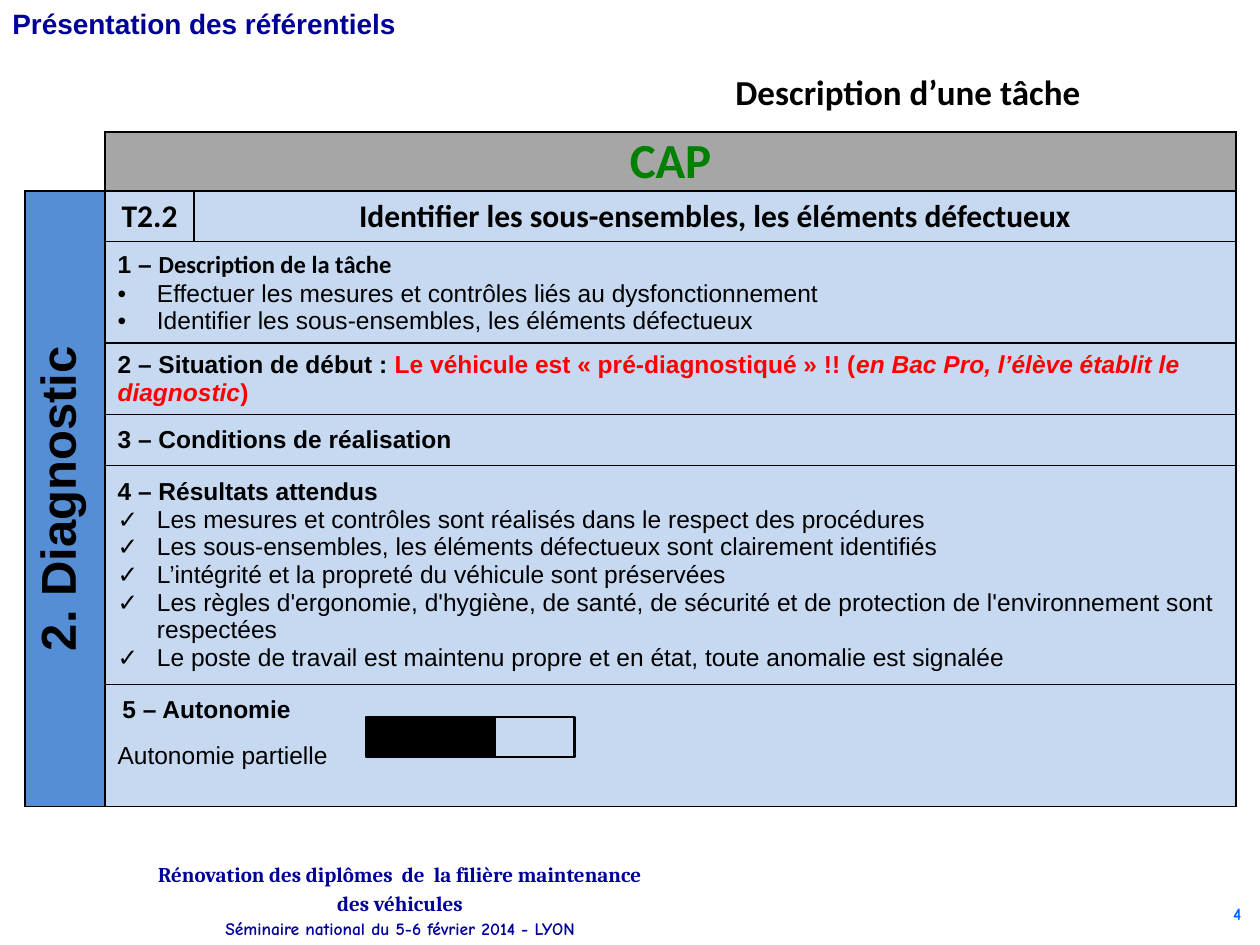
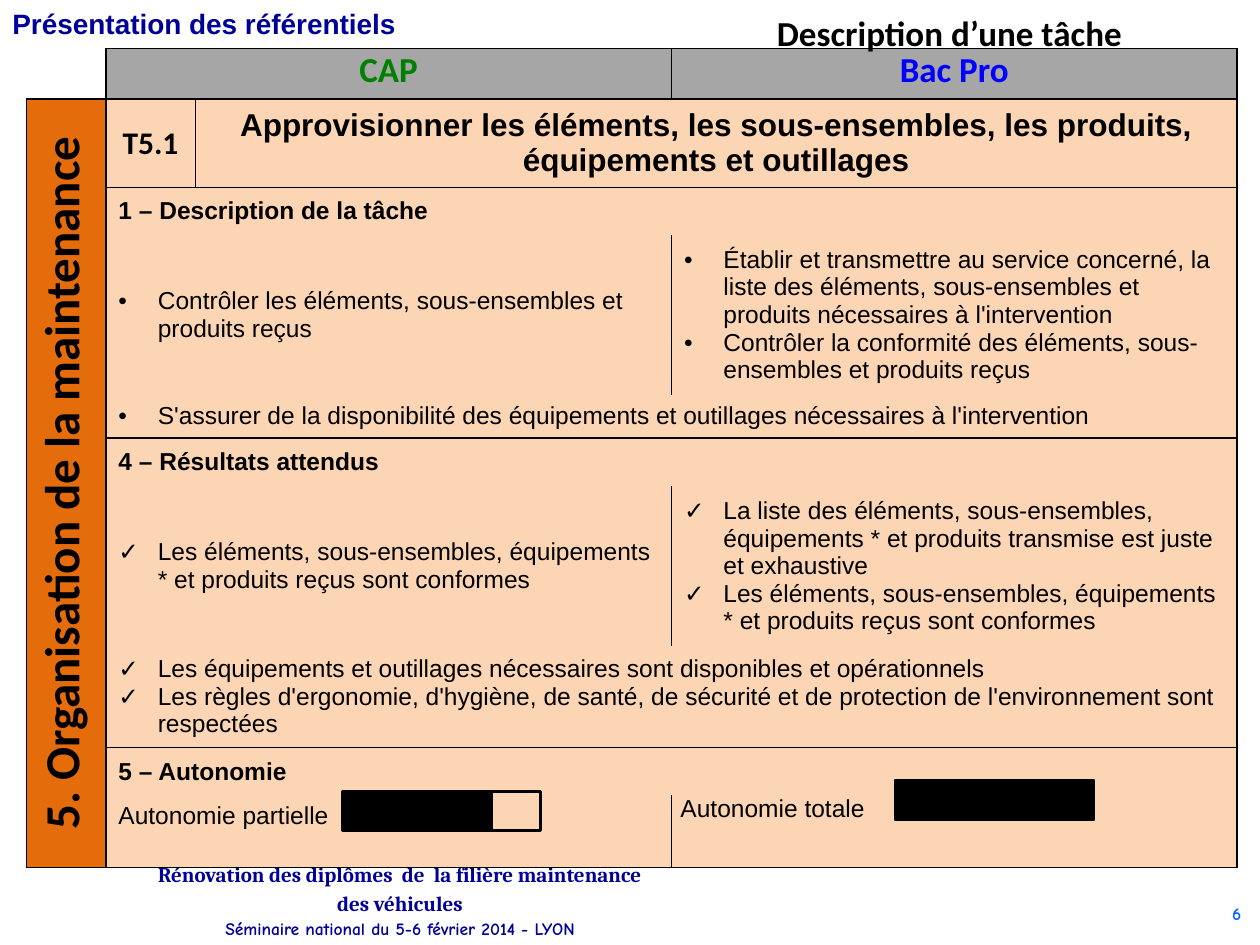
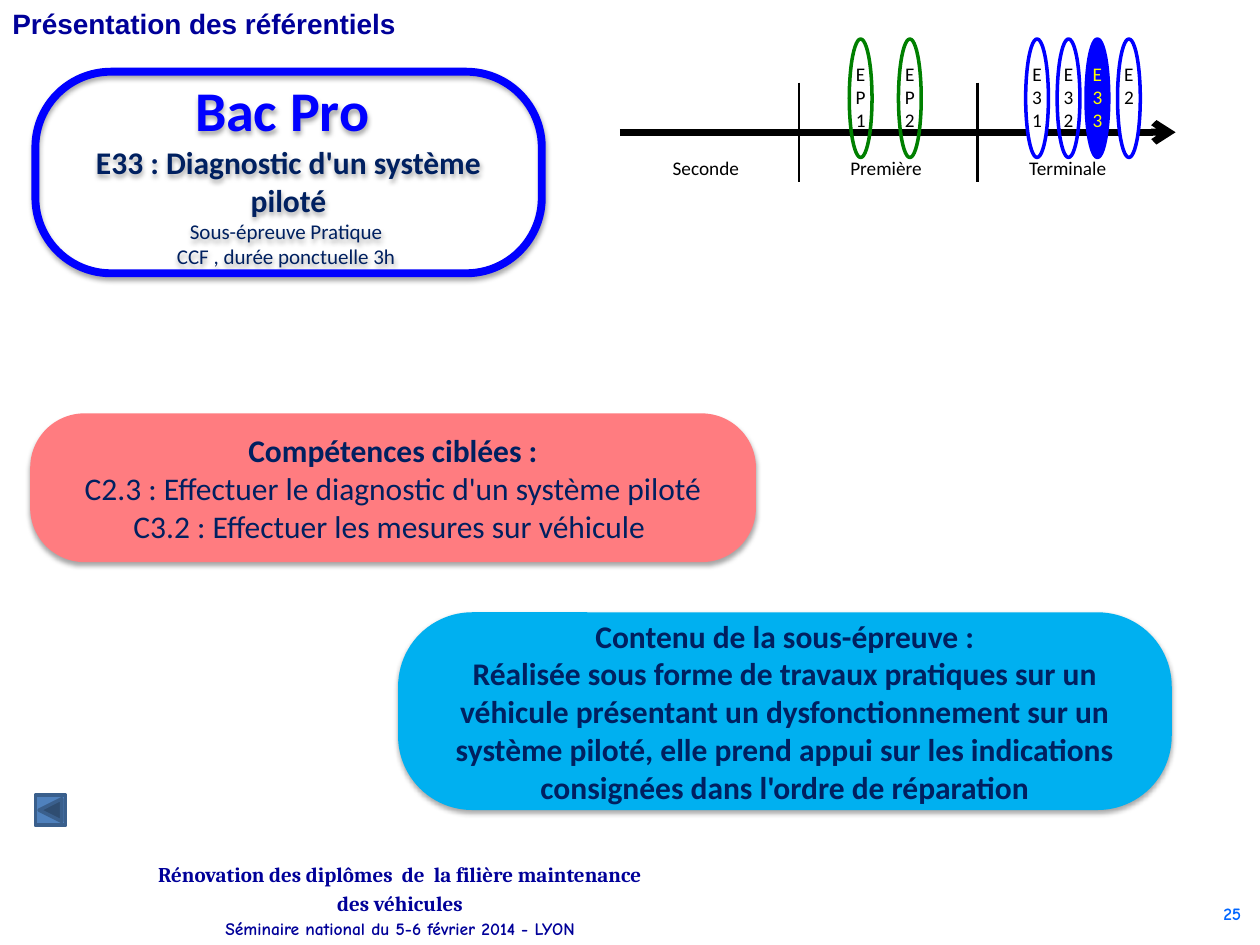
import lxml.etree
import pptx
import pptx.util
import pptx.dml.color
import pptx.enum.shapes
import pptx.enum.text
import pptx.oxml.ns

Pt = pptx.util.Pt
SHAPES = pptx.enum.shapes.MSO_SHAPE
MIDDLE = pptx.enum.text.MSO_ANCHOR.MIDDLE
TOP = pptx.enum.text.MSO_ANCHOR.TOP
ALIGN = {
    "left": pptx.enum.text.PP_ALIGN.LEFT,
    "center": pptx.enum.text.PP_ALIGN.CENTER,
    "right": pptx.enum.text.PP_ALIGN.RIGHT,
}

BLACK, WHITE, RED, YELLOW = "000000", "FFFFFF", "FF0000", "FFFF00"
GREEN, BLUE, NAVY, INK = "008000", "0000FF", "002060", "000099"
GREY, SKY, PEACH = "A6A6A6", "C6D9F1", "FCD5B5"
COMIC = "Comic Neue"

SECTION = "Présentation des référentiels"
SEMINAR = [
    ("Rénovation des diplômes  de  la filière maintenance des véhicules", dict(size=12, font="Cambria")),
    ("Séminaire national du 5-6 février 2014 - LYON", dict(size=10, font=COMIC)),
]
SUBTITLE = "Description d’une tâche"
ERGONOMICS = ("Les règles d'ergonomie, d'hygiène, de santé, de sécurité et de protection "
              "de l'environnement sont respectées")

HEADER = dict(font="Calibri", bold=True, align="center", anchor=TOP, inset=(7.2, 0))
SIDE = dict(size=28, bold=True, align="center", vertical=True)
CODE = dict(size=18, font="Calibri", bold=True, align="center")
HEADING = dict(bold=True)
DOT, TICK = dict(bullet="•"), dict(bullet="✓")

DIAGNOSTIC = dict(
    left=14.4, top=75.4,
    widths=[45.6, 51, 595.4],
    heights=[33.7, 29, 58, 40.7, 29.2, 124.9, 29.5, 40.5],
    cells=[
        (0, 0, 1, 1, None, "RB", [], {}),
        (0, 1, 1, 2, GREY, "LRTB", ["CAP"], dict(HEADER, size=28, color=GREEN)),
        (1, 0, 7, 1, "558ED5", "LRTB", ["2. Diagnostic"], SIDE),
        (1, 1, 1, 1, SKY, "LRTB", ["T2.2"], CODE),
        (1, 2, 1, 1, SKY, "LRTB", ["Identifier les sous-ensembles, les éléments défectueux"], CODE),
        (2, 1, 1, 2, SKY, "LRTB", [
            [("1 – ", HEADING), ("Description de la tâche", dict(bold=True, font="Calibri"))],
            ("Effectuer les mesures et contrôles liés au dysfonctionnement", DOT),
            ("Identifier les sous-ensembles, les éléments défectueux", DOT)], {}),
        (3, 1, 1, 2, SKY, "LRTB", [[
            ("2 – Situation de début : ", {}),
            ("Le véhicule est « pré-diagnostiqué » !! (", dict(color=RED)),
            ("en Bac Pro, l’élève établit le diagnostic", dict(color=RED, italic=True)),
            (")", dict(color=RED))]], HEADING),
        (4, 1, 1, 2, SKY, "LRTB", ["3 – Conditions de réalisation"], HEADING),
        (5, 1, 1, 2, SKY, "LRTB", [
            ("4 – Résultats attendus", HEADING),
            ("Les mesures et contrôles sont réalisés dans le respect des procédures", TICK),
            ("Les sous-ensembles, les éléments défectueux sont clairement identifiés", TICK),
            ("L’intégrité et la propreté du véhicule sont préservées", TICK),
            (ERGONOMICS, TICK),
            ("Le poste de travail est maintenu propre et en état, toute anomalie est signalée", TICK)], {}),
        (6, 1, 1, 2, SKY, "LRT", [[(" ", dict(size=10)), ("5 – Autonomie", {})]], HEADING),
        (7, 1, 1, 2, SKY, "LRB", ["Autonomie partielle"], dict(anchor=TOP)),
    ])

MAINTENANCE = dict(
    left=15.1, top=27.8,
    widths=[45.4, 51.1, 272.1, 323.3],
    heights=[24.3, 50.6, 27.1, 91.1, 24.6, 27.7, 90.6, 58, 27.4, 41.1],
    cells=[
        (0, 0, 1, 1, None, "RB", [], {}),
        (0, 1, 1, 2, GREY, "LRTB", ["CAP"], dict(HEADER, size=20, color=GREEN)),
        (0, 3, 1, 1, GREY, "LRTB", ["Bac Pro"], dict(HEADER, size=20, color=BLUE)),
        (1, 0, 9, 1, "E46C0A", "LRTB", ["5. Organisation de la maintenance"], dict(SIDE, font="Calibri")),
        (1, 1, 1, 1, PEACH, "LRTB", ["T5.1"], CODE),
        (1, 2, 1, 2, PEACH, "LRTB", [
            "Approvisionner les éléments, les sous-ensembles, les produits, équipements et outillages"],
            dict(CODE, font="Arial")),
        (2, 1, 1, 3, PEACH, "LRT", ["1 – Description de la tâche"], HEADING),
        (3, 1, 1, 2, PEACH, "LR", ["Contrôler les éléments, sous-ensembles et produits reçus"], DOT),
        (3, 3, 1, 1, PEACH, "LR", [
            "Établir et transmettre au service concerné, la liste des éléments, sous-ensembles "
            "et produits nécessaires à l'intervention",
            "Contrôler la conformité des éléments, sous-ensembles et produits reçus"], DOT),
        (4, 1, 1, 3, PEACH, "LRB", [
            "S'assurer de la disponibilité des équipements et outillages nécessaires à l'intervention"], DOT),
        (5, 1, 1, 3, PEACH, "LRT", ["4 – Résultats attendus"], HEADING),
        (6, 1, 1, 2, PEACH, "LR", [
            "Les éléments, sous-ensembles, équipements * et produits reçus sont conformes"], TICK),
        (6, 3, 1, 1, PEACH, "LR", [
            "La liste des éléments, sous-ensembles, équipements * et produits transmise est juste et exhaustive",
            "Les éléments, sous-ensembles, équipements * et produits reçus sont conformes"], TICK),
        (7, 1, 1, 3, PEACH, "LRB", [
            "Les équipements et outillages nécessaires sont disponibles et opérationnels", ERGONOMICS], TICK),
        (8, 1, 1, 3, PEACH, "LRT", ["5 – Autonomie"], HEADING),
        (9, 1, 1, 2, PEACH, "LRB", ["Autonomie partielle"], dict(anchor=TOP)),
        (9, 3, 1, 1, PEACH, "LRB", ["Autonomie totale"], dict(anchor=TOP, inset=(5.2, 0))),
    ])

TASKS = [
    dict(number=4, table=DIAGNOSTIC, subtitle=(365.8, 36.7, 306, 31.7),
         gauges=[(209.5, 409.7, 118.8, 23, 73.4)]),
    dict(number=6, table=MAINTENANCE, subtitle=(382.3, 2.9, 320.4, 31.7),
         gauges=[(195.8, 452.2, 113, 22.3, 85), (511.9, 445.7, 113, 23, 113)]),
]

EXAM_NUMBER = 25
EXAM_CARDS = [
    ((20.2, 41, 289.4, 115.2), 0.375, None, BLUE, [
        ("Bac Pro ", dict(size=32, color=BLUE, bold=True)),
        ("E33 : Diagnostic d'un système piloté", dict(size=18, bold=True)),
        ("Sous-épreuve Pratique ", dict(size=12)),
        ("CCF , durée ponctuelle 3h ", dict(size=12))]),
    ((17.3, 236.2, 414.7, 85), 0.365, "FF7C80", None, [
        ("Compétences ciblées :", HEADING),
        "C2.3 : Effectuer le diagnostic d'un système piloté",
        "C3.2 : Effectuer les mesures sur véhicule "]),
    ((227.5, 349.9, 442.1, 113), 0.375, "00B0F0", None, [
        ("Contenu de la sous-épreuve :", HEADING),
        ("Réalisée sous forme de travaux pratiques sur un véhicule présentant un dysfonctionnement "
         "sur un système piloté, elle prend appui sur les indications consignées dans l'ordre de "
         "réparation", HEADING)]),
]
AXIS_Y, AXIS_START, AXIS_END = 75.6, 354.2, 671.8
YEAR_LIMITS = [456.5, 558.7]
YEARS = [("Seconde", 377.3), ("Première", 478.8), ("Terminale", 581)]
EXAMS = [
    ("E2", 638.6, WHITE, BLUE, BLACK),
    ("E31", 586.1, WHITE, BLUE, BLACK),
    ("E32", 604.1, None, BLUE, BLACK),
    ("E33", 620.6, BLUE, BLUE, YELLOW),
    ("EP2", 513.4, None, GREEN, BLACK),
    ("EP1", 485.3, None, GREEN, BLACK),
]


def rgb(code):
    return pptx.dml.color.RGBColor.from_string(code)


def add_xml(parent, tag, **attributes):
    return lxml.etree.SubElement(parent, pptx.oxml.ns.qn("a:" + tag), attributes)


def write(frame, paragraphs, **base):
    for index, runs in enumerate(paragraphs):
        paragraph = frame.add_paragraph() if index else frame.paragraphs[0]
        if isinstance(runs, str):
            runs = [(runs, {})]
        elif isinstance(runs, tuple):
            runs = [runs]
        layout = {**base, **runs[0][1]}
        paragraph.alignment = ALIGN[layout.get("align", "left")]
        if "spacing" in layout:
            paragraph.line_spacing = layout["spacing"]
        if "bullet" in layout:
            properties = paragraph._p.get_or_add_pPr()
            properties.set("marL", str(Pt(22.5)))
            properties.set("indent", str(-Pt(22.5)))
            add_xml(properties, "buFont", typeface="Arial")
            add_xml(properties, "buChar", char=layout["bullet"])
        for text, changes in runs:
            style = {**base, **changes}
            run = paragraph.add_run()
            run.text = text
            run.font.size = Pt(style.get("size", 14))
            run.font.name = style.get("font", "Arial")
            run.font.bold = style.get("bold", False)
            run.font.italic = style.get("italic", False)
            run.font.color.rgb = rgb(style.get("color", BLACK))


def add_label(slide, place, paragraphs, anchor=TOP, **style):
    frame = slide.shapes.add_textbox(*map(Pt, place)).text_frame
    frame.word_wrap = True
    frame.vertical_anchor = anchor
    write(frame, paragraphs, **style)


def paint(part, color):
    if color:
        part.solid()
        part.fore_color.rgb = rgb(color)
    else:
        part.background()


def add_shape(slide, kind, place, fill=None, line=None, weight=1.5):
    shape = slide.shapes.add_shape(kind, *map(Pt, place))
    shape.shadow.inherit = False
    paint(shape.fill, fill)
    paint(shape.line.fill, line)
    if line:
        shape.line.width = Pt(weight)
    return shape


def add_line(slide, x1, y1, x2, y2, weight, arrow=False):
    line = slide.shapes.add_connector(pptx.enum.shapes.MSO_CONNECTOR.STRAIGHT, *map(Pt, (x1, y1, x2, y2)))
    line.line.color.rgb = rgb(BLACK)
    line.line.width = Pt(weight)
    if arrow:
        add_xml(line.line._get_or_add_ln(), "tailEnd", type="arrow")
    add_xml(line._element.spPr, "effectLst")


def add_soft_shadow(shape):
    effects = shape._element.spPr.find(pptx.oxml.ns.qn("a:effectLst"))
    shadow = add_xml(effects, "outerShdw", blurRad=str(Pt(3.1)), dist=str(Pt(1.8)), dir="5400000",
                     rotWithShape="0")
    add_xml(add_xml(shadow, "srgbClr", val=BLACK), "alpha", val="35000")


def set_borders(cell, sides):
    properties = cell._tc.get_or_add_tcPr()
    for side in "LRTB":
        border = add_xml(properties, "ln" + side, w=str(Pt(1)))
        if side in sides:
            add_xml(add_xml(border, "solidFill"), "srgbClr", val=BLACK)
        else:
            add_xml(border, "noFill")


def add_task_table(slide, left, top, widths, heights, cells):
    table = slide.shapes.add_table(len(heights), len(widths), Pt(left), Pt(top),
                                   Pt(sum(widths)), Pt(sum(heights))).table
    table.first_row = table.horz_banding = False
    for column, width in zip(table.columns, widths):
        column.width = Pt(width)
    for row, height in zip(table.rows, heights):
        row.height = Pt(height)
    for row, column, row_span, column_span, fill, sides, paragraphs, style in cells:
        origin = table.cell(row, column)
        last_row, last_column = row + row_span - 1, column + column_span - 1
        if row_span * column_span > 1:
            origin.merge(table.cell(last_row, last_column))
        for r in range(row, last_row + 1):
            for c in range(column, last_column + 1):
                outer = {"L": c == column, "R": c == last_column, "T": r == row, "B": r == last_row}
                cell = table.cell(r, c)
                is_origin = (r, c) == (row, column)
                set_borders(cell, [side for side in sides if is_origin or outer[side]])
                paint(cell.fill, fill)
        origin.vertical_anchor = style.get("anchor", MIDDLE)
        across, down = style.get("inset", (7.2, 3.6))
        origin.margin_left = origin.margin_right = Pt(across)
        origin.margin_top = origin.margin_bottom = Pt(down)
        if style.get("vertical"):
            origin._tc.get_or_add_tcPr().set("vert", "vert270")
        write(origin.text_frame, paragraphs, **style)


def add_base_slide(deck, number):
    slide = deck.slides.add_slide(deck.slide_layouts[6])
    add_label(slide, (673.2, 512.6, 43.2, 23), [str(number)],
              size=10, font=COMIC, color="0066FF", bold=True, align="right")
    add_label(slide, (82.1, 493.2, 293, 40.3), SEMINAR, anchor=MIDDLE,
              color=INK, bold=True, align="center", spacing=1.15)
    add_label(slide, (0, 0, 237, 26.6), [SECTION], size=16, color=INK, bold=True)
    return slide


def add_task_slide(deck, number, table, subtitle, gauges):
    slide = add_base_slide(deck, number)
    add_task_table(slide, **table)
    for left, top, width, height, filled in gauges:
        add_shape(slide, SHAPES.RECTANGLE, (left, top, width, height), None, BLACK)
        add_shape(slide, SHAPES.RECTANGLE, (left, top, filled, height), BLACK, BLACK)
    add_label(slide, subtitle, [SUBTITLE], size=20, font="Calibri", bold=True, align="center")


def add_exam_slide(deck):
    slide = add_base_slide(deck, EXAM_NUMBER)
    for place, rounding, fill, line, paragraphs in EXAM_CARDS:
        card = add_shape(slide, SHAPES.ROUNDED_RECTANGLE, place, fill, line, 4.5)
        card.adjustments[0] = rounding
        add_soft_shadow(card)
        card.text_frame.word_wrap = True
        card.text_frame.vertical_anchor = MIDDLE
        write(card.text_frame, paragraphs, size=18, font="Calibri", color=NAVY, align="center")
    add_shape(slide, SHAPES.ACTION_BUTTON_BACK_OR_PREVIOUS, (20.2, 454.3, 17.3, 17.3), "4F81BD", "3A5F8C", 2)
    add_line(slide, AXIS_START, AXIS_Y, AXIS_END, AXIS_Y, 4, arrow=True)
    for x in YEAR_LIMITS:
        add_line(slide, x, AXIS_Y - 28.4, x, AXIS_Y + 28.4, 1.5)
    for year, left in YEARS:
        add_label(slide, (left, 85.7, 62.6, 20.9), [year], size=11, font="Calibri")
    for exam, left, fill, line, color in EXAMS:
        oval = add_shape(slide, SHAPES.OVAL, (left, 22.3, 13, 67.7), fill, line, 2)
        frame = oval.text_frame
        frame.word_wrap = True
        frame.vertical_anchor = TOP
        frame.margin_left = frame.margin_right = 0
        write(frame, [exam], size=11, font="Calibri", color=color, align="center")


def main():
    deck = pptx.Presentation()
    deck.slide_width, deck.slide_height = Pt(720), Pt(540)
    for task in TASKS:
        add_task_slide(deck, **task)
    add_exam_slide(deck)
    deck.save("out.pptx")


if __name__ == "__main__":
    main()
